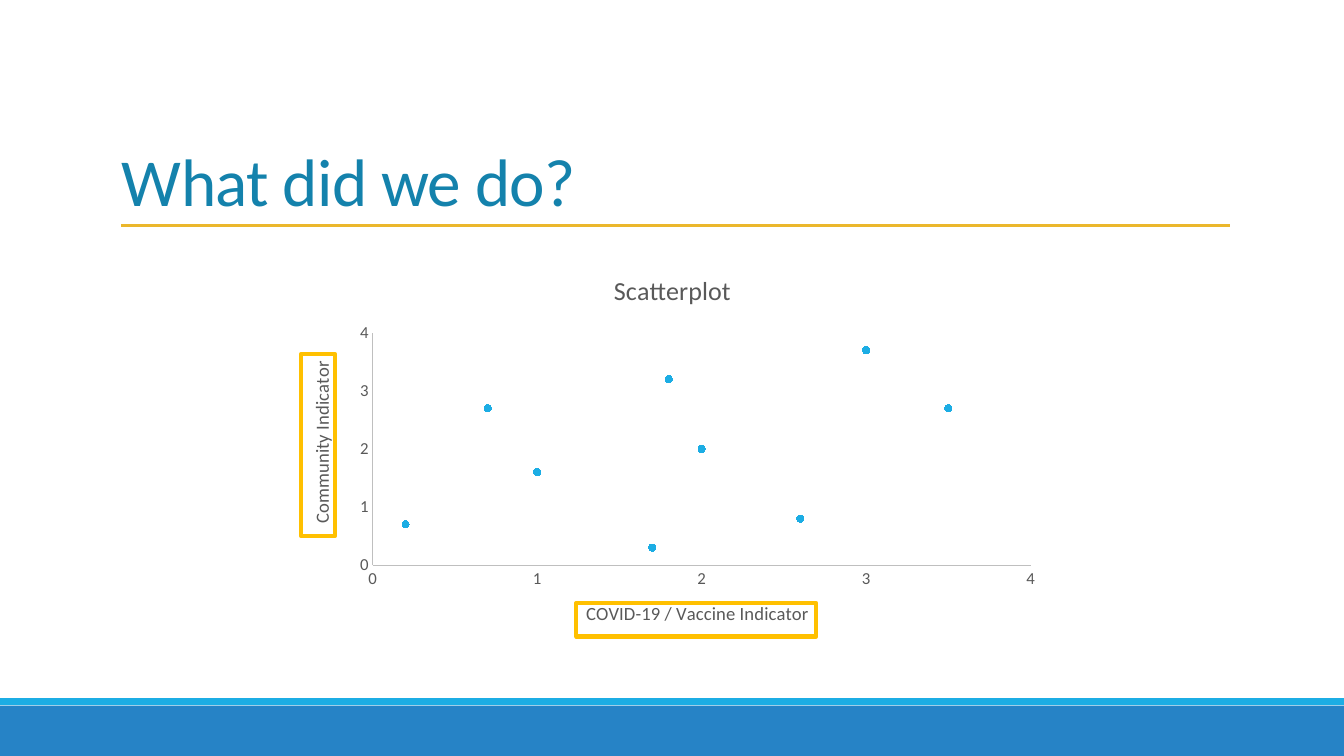
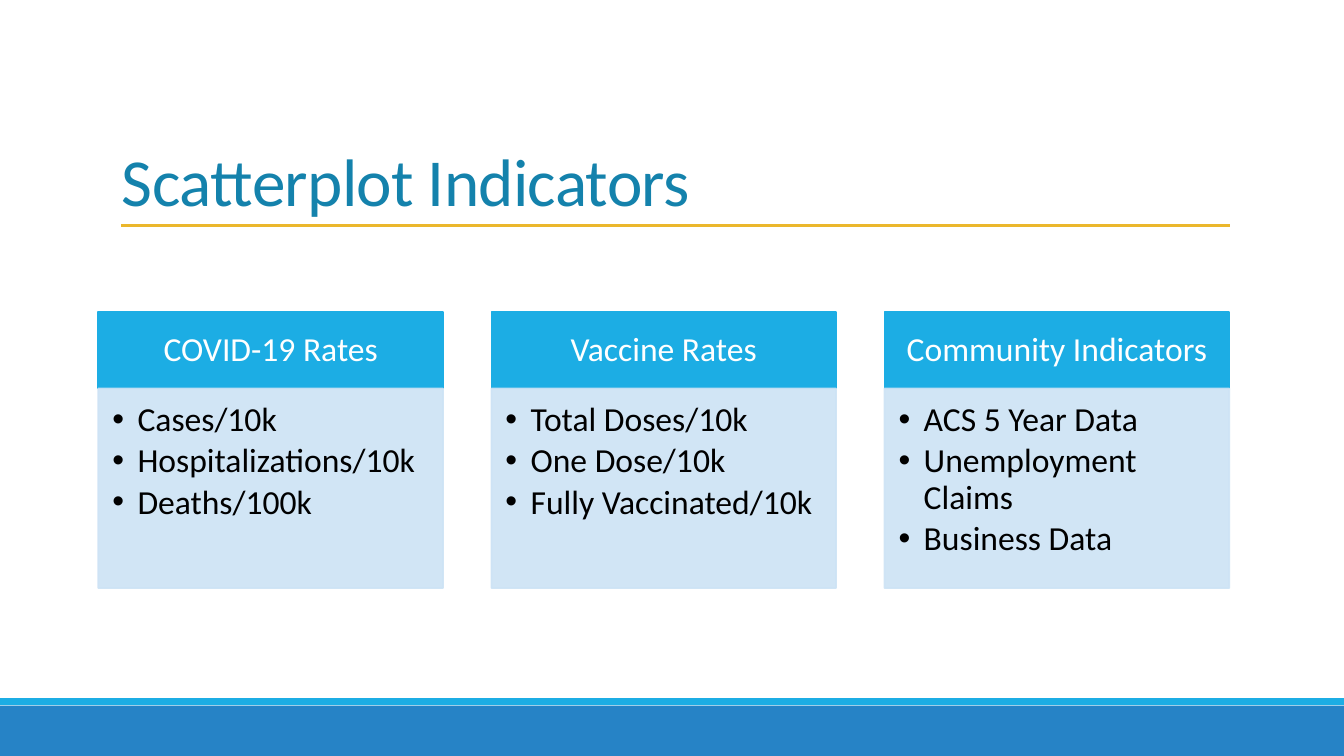
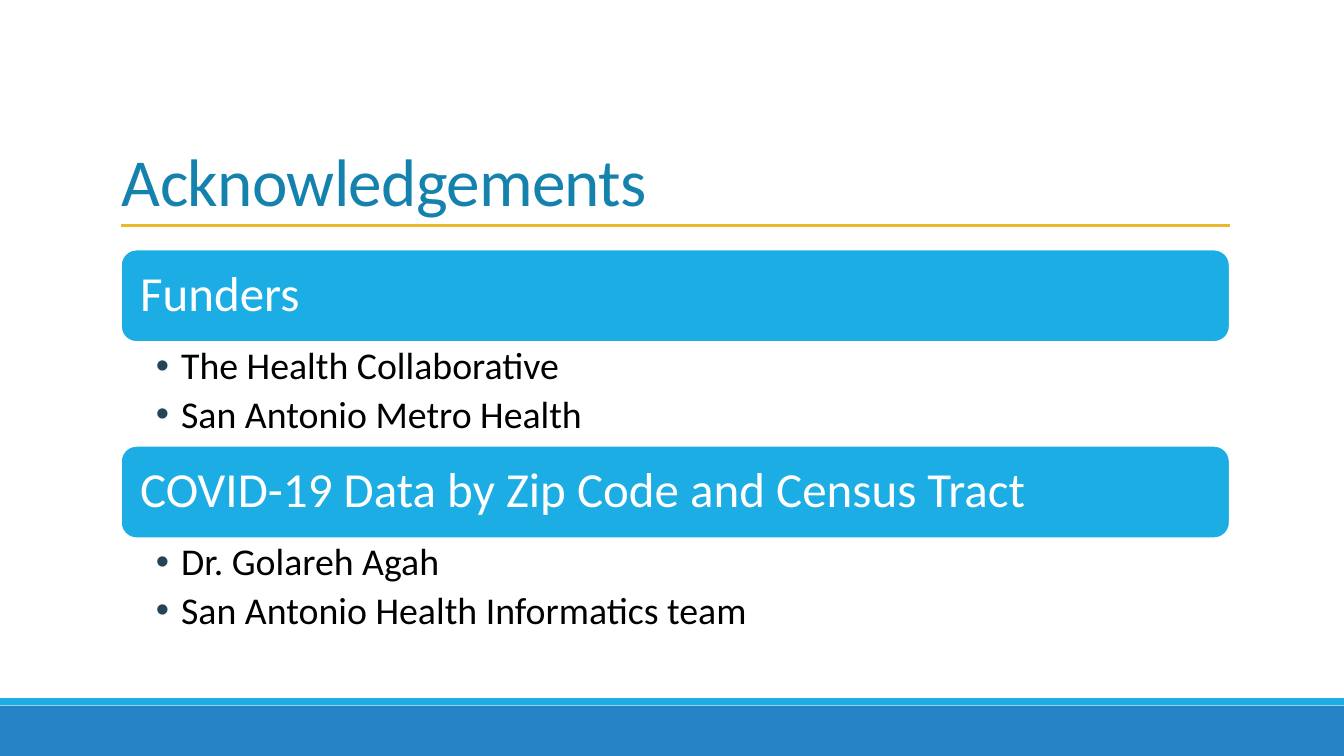
from lxml import etree
from pptx import Presentation
from pptx.chart.data import XyChartData
from pptx.dml.color import RGBColor
from pptx.enum.chart import XL_CHART_TYPE, XL_MARKER_STYLE, XL_TICK_MARK
from pptx.enum.shapes import MSO_CONNECTOR, MSO_SHAPE
from pptx.enum.text import MSO_ANCHOR, MSO_AUTO_SIZE, PP_ALIGN
from pptx.oxml.ns import qn
from pptx.util import Pt

RECT = MSO_SHAPE.RECTANGLE
ROUND_RECT = MSO_SHAPE.ROUNDED_RECTANGLE
STRAIGHT = MSO_CONNECTOR.STRAIGHT
SCATTER = XL_CHART_TYPE.XY_SCATTER
CIRCLE = XL_MARKER_STYLE.CIRCLE
NO_TICK = XL_TICK_MARK.NONE
TOP, MIDDLE, BOTTOM = MSO_ANCHOR.TOP, MSO_ANCHOR.MIDDLE, MSO_ANCHOR.BOTTOM
LEFT, CENTER = PP_ALIGN.LEFT, PP_ALIGN.CENTER
NO_FIT = MSO_AUTO_SIZE.NONE

FONT = "Calibri"
BULLET_FONT = "Arial"
WHITE = RGBColor(0xFF, 0xFF, 0xFF)
BLACK = RGBColor(0, 0, 0)
BLUE = RGBColor(0x26, 0x83, 0xC6)
CYAN = RGBColor(0x1C, 0xAD, 0xE4)
PALE_BLUE = RGBColor(0xCD, 0xE3, 0xF5)
TITLE_BLUE = RGBColor(0x14, 0x82, 0xAC)
GOLD = RGBColor(0xEB, 0xB7, 0x2C)
AMBER = RGBColor(0xFF, 0xC0, 0x00)
GREY = RGBColor(0x59, 0x59, 0x59)
AXIS_GREY = RGBColor(0xBF, 0xBF, 0xBF)
BULLET_NAVY = RGBColor(0x26, 0x44, 0x57)

SLIDE_W, SLIDE_H = 960, 540
RULE_LEFT, RULE_RIGHT, RULE_Y = 86.4, 878.4, 161.2
CHART_W, CHART_H = 540, 281.5

POINTS = [(0.7, 2.7), (1.8, 3.2), (2.6, 0.8), (1.7, 0.3), (0.2, 0.7),
          (3, 3.7), (2, 2), (1, 1.6), (3.5, 2.7)]
CARDS = [
    ("COVID-19 Rates", ["Cases/10k", "Hospitalizations/10k", "Deaths/100k"]),
    ("Vaccine Rates", ["Total Doses/10k", "One Dose/10k", "Fully Vaccinated/10k"]),
    ("Community Indicators", ["ACS 5 Year Data", "Unemployment Claims", "Business Data"]),
]
THANKS = [
    ("Funders", ["The Health Collaborative", "San Antonio Metro Health"]),
    ("COVID-19 Data by Zip Code and Census Tract",
     ["Dr. Golareh Agah", "San Antonio Health Informatics team"]),
]


def set_font(font, size, color):
    font.name = FONT
    font.size = Pt(size)
    font.color.rgb = color


def add_box(s, box, fill=None, line=None, width=1.25, kind=RECT):
    sp = s.shapes.add_shape(kind, *map(Pt, box))
    sp.shadow.inherit = False
    if fill is None:
        sp.fill.background()
    else:
        sp.fill.solid()
        sp.fill.fore_color.rgb = fill
    if line is None:
        sp.line.fill.background()
    else:
        sp.line.color.rgb = line
        sp.line.width = Pt(width)
    return sp


def set_opacity(sp, percent):
    for color in list(sp._element.spPr.iter(qn("a:srgbClr"))):
        etree.SubElement(color, qn("a:alpha"), val=str(percent * 1000))


def add_bullet(p, color):
    pPr = p._p.get_or_add_pPr()
    pPr.set("marL", str(Pt(18)))
    pPr.set("indent", str(Pt(-18)))
    bu_clr = etree.SubElement(pPr, qn("a:buClr"))
    etree.SubElement(bu_clr, qn("a:srgbClr"), val=str(color))
    etree.SubElement(pPr, qn("a:buFont"), typeface=BULLET_FONT)
    etree.SubElement(pPr, qn("a:buChar"), char="•")


def write(sp, lines, size, color, insets, anchor=TOP, align=LEFT,
          bullet_color=None, gap=0):
    tf = sp.text_frame
    tf.word_wrap = True
    tf.vertical_anchor = anchor
    tf.margin_left, tf.margin_top, tf.margin_right, tf.margin_bottom = map(Pt, insets)
    tf.text = "\n".join(lines)
    for p in tf.paragraphs:
        if bullet_color is not None:
            add_bullet(p, bullet_color)
        p.alignment = align
        p.line_spacing = 0.9
        p.space_after = Pt(gap)
        for r in p.runs:
            set_font(r.font, size, color)


def add_slide(prs, title):
    s = prs.slides.add_slide(prs.slide_layouts[5])
    add_box(s, (0, 504, SLIDE_W, 36), BLUE)
    add_box(s, (0, 498.7, SLIDE_W, 5), CYAN)
    sp = s.shapes.title
    sp.left, sp.top, sp.width, sp.height = map(Pt, (79.9, 66.24, 792, 95))
    tf = sp.text_frame
    tf.auto_size = NO_FIT
    tf.vertical_anchor = BOTTOM
    tf.text = title
    p = tf.paragraphs[0]
    p.alignment = LEFT
    p.line_spacing = 0.85
    r = p.runs[0]
    set_font(r.font, 48, TITLE_BLUE)
    r._r.get_or_add_rPr().set("spc", "-50")
    rule = s.shapes.add_connector(
        STRAIGHT, Pt(RULE_LEFT), Pt(RULE_Y), Pt(RULE_RIGHT), Pt(RULE_Y))
    rule.line.color.rgb = GOLD
    rule.line.width = Pt(2)
    etree.SubElement(rule._element.spPr, qn("a:effectLst"))
    return s


def manual_layout(x, y, w=None, h=None):
    layout = etree.Element(qn("c:layout"))
    manual = etree.SubElement(layout, qn("c:manualLayout"))
    values = [("xMode", "edge"), ("yMode", "edge"),
              ("x", x / CHART_W), ("y", y / CHART_H)]
    if w is not None:
        values = [("layoutTarget", "inner")] + values
        values += [("w", w / CHART_W), ("h", h / CHART_H)]
    for tag, value in values:
        etree.SubElement(manual, qn(f"c:{tag}"), val=str(value))
    return layout


def format_title(title, text, size, x, y):
    tf = title.text_frame
    tf.text = text
    font = tf.paragraphs[0].runs[0].font
    set_font(font, size, GREY)
    font.bold = False
    element = title._element
    for old in element.findall(qn("c:layout")):
        element.remove(old)
    element.find(qn("c:tx")).addnext(manual_layout(x, y))


def format_axis(axis):
    axis.minimum_scale, axis.maximum_scale, axis.major_unit = 0, 4, 1
    axis.has_major_gridlines = False
    axis.major_tick_mark = axis.minor_tick_mark = NO_TICK
    axis.format.line.color.rgb = AXIS_GREY
    axis.format.line.width = Pt(0.75)
    set_font(axis.tick_labels.font, 12, GREY)
    axis.tick_labels.number_format = "General"
    axis.tick_labels.number_format_is_linked = False


def add_scatter(s, left, top):
    data = XyChartData()
    points = data.add_series("Series 1")
    for x, y in POINTS:
        points.add_data_point(x, y)
    box = (left, top, CHART_W, CHART_H)
    chart = s.shapes.add_chart(SCATTER, *map(Pt, box), data).chart
    set_font(chart.font, 10, BLACK)
    chart.has_legend = False
    chart.has_title = True
    format_title(chart.chart_title, "Scatterplot", 18.6, 225, 10)
    x_axis, y_axis = chart.category_axis, chart.value_axis
    format_axis(x_axis)
    format_axis(y_axis)
    format_title(x_axis.axis_title, "COVID-19 / Vaccine Indicator", 13.3, 206, 245.5)
    format_title(y_axis.axis_title, "Community Indicator", 13.3, 8, 75)
    plot = chart.plots[0]
    plot.vary_by_categories = False
    series = plot.series[0]
    series.format.line.fill.background()
    series.marker.style = CIRCLE
    series.marker.size = 5
    series.marker.format.fill.solid()
    series.marker.format.fill.fore_color.rgb = CYAN
    series.marker.format.line.color.rgb = CYAN
    area = chart._chartSpace.chart.plotArea
    for old in area.findall(qn("c:layout")):
        area.remove(old)
    area.insert(0, manual_layout(56, 57, 470, 166))


def add_card(s, left, heading, items):
    width = 246.24
    head = add_box(s, (left, 223, width, 54.5), CYAN, CYAN)
    write(head, [heading], 24, WHITE, (13.5, 8, 13.5, 8), MIDDLE, CENTER)
    body = add_box(s, (left, 277.5, width, 142.5), PALE_BLUE, PALE_BLUE)
    set_opacity(body, 90)
    write(body, items, 24, BLACK, (10, 10, 13.5, 15), bullet_color=BLACK, gap=3.6)


def add_thanks(s, top, heading, items):
    width = RULE_RIGHT - RULE_LEFT
    head = add_box(s, (RULE_LEFT, top, width, 66), CYAN, WHITE, kind=ROUND_RECT)
    write(head, [heading], 35, WHITE, (10.5, 10.8, 10.5, 10.8), MIDDLE)
    body = s.shapes.add_textbox(*map(Pt, (RULE_LEFT, top + 66, width, 74)))
    write(body, items, 27, BLACK, (25, 3.5, 19.5, 3.5),
          bullet_color=BULLET_NAVY, gap=5.4)


def main():
    prs = Presentation()
    prs.slide_width, prs.slide_height = Pt(SLIDE_W), Pt(SLIDE_H)

    s = add_slide(prs, "What did we do?")
    add_scatter(s, 210.2, 180.7)
    for frame in [(411.7, 430.7, 171.3, 24), (215.2, 252.7, 24, 130.3)]:
        add_box(s, frame, line=AMBER, width=3)

    s = add_slide(prs, "Scatterplot Indicators")
    for i, (heading, items) in enumerate(CARDS):
        add_card(s, 70.2 + i * 280.8, heading, items)

    s = add_slide(prs, "Acknowledgements")
    for i, (heading, items) in enumerate(THANKS):
        add_thanks(s, 178.3 + i * 140.2, heading, items)

    prs.save("out.pptx")


if __name__ == "__main__":
    main()
